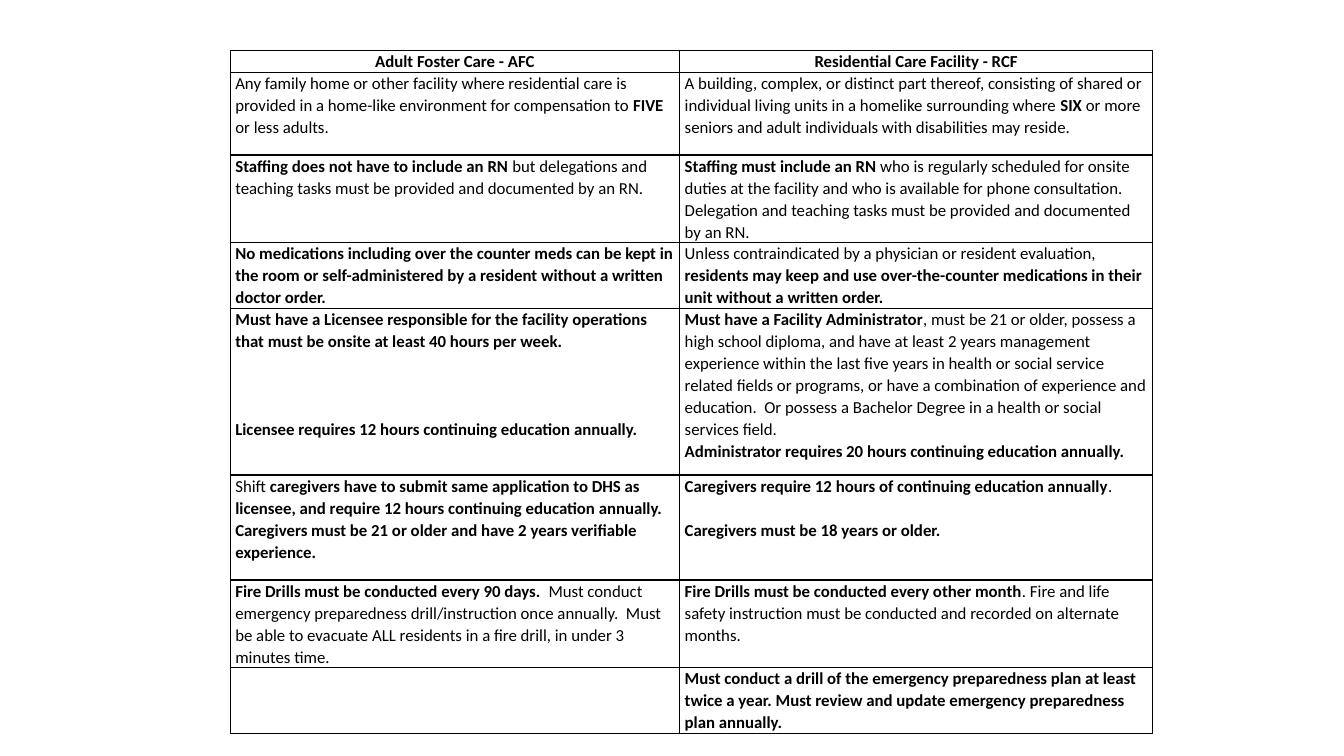
import dataclasses

import pptx
import pptx.dml.color
import pptx.enum.text
import pptx.oxml
import pptx.oxml.ns
import pptx.util

Pt = pptx.util.Pt
ALIGN = pptx.enum.text.PP_ALIGN


@dataclasses.dataclass(frozen=True)
class Theme:
    font: str = "Calibri"
    size: float = 12
    ink: str = "000000"
    border: float = 1
    line_spacing: float = 1.07
    line_height: float = 15.65
    side_margin: float = 3.6


THEME = Theme()
COLUMN_WIDTHS = (321, 338)
ROW_HEIGHTS = (15, 59, 59, 45, 119, 75, 59, 44)

# Asterisk pairs enclose bold words; each paragraph is (blank lines above, words).
ROWS = (
    ([(0, "**Adult Foster Care - AFC**")],
     [(0, "**Residential Care Facility - RCF**")]),
    ([(0, "Any family home or other facility where residential care is provided in a "
          "home-like environment for compensation to **FIVE** or less adults.")],
     [(0, "A building, complex, or distinct part thereof, consisting of shared or "
          "individual living units in a homelike surrounding where **SIX** or more "
          "seniors and adult individuals with disabilities may reside.")]),
    ([(0, "**Staffing does not have to include an RN** but delegations and teaching "
          "tasks must be provided and documented by an RN.")],
     [(0, "**Staffing must include an RN** who is regularly scheduled for onsite duties "
          "at the facility and who is available for phone consultation.  Delegation and "
          "teaching tasks must be provided and documented by an RN.")]),
    ([(0, "**No medications including over the counter meds can be kept in the room or "
          "self-administered by a resident without a written doctor order.**")],
     [(0, "Unless contraindicated by a physician or resident evaluation, **residents may "
          "keep and use over-the-counter medications in their unit without a written "
          "order.**")]),
    ([(0, "**Must have a Licensee responsible for the facility operations that must be "
          "onsite at least 40 hours per week.**"),
      (3, "**Licensee requires 12 hours continuing education annually.**")],
     [(0, "**Must have a Facility Administrator**, must be 21 or older, possess a high "
          "school diploma, and have at least 2 years management experience within the "
          "last five years in health or social service related fields or programs, or "
          "have a combination of experience and education.  Or possess a Bachelor Degree "
          "in a health or social services field."),
      (0, "**Administrator requires 20 hours continuing education annually.**")]),
    ([(0, "Shift **caregivers have to submit same application to DHS as licensee, and "
          "require 12 hours continuing education annually.**"),
      (0, "**Caregivers must be 21 or older and have 2 years verifiable experience.**")],
     [(0, "**Caregivers require 12 hours of continuing education annually**."),
      (1, "**Caregivers must be 18 years or older.**")]),
    ([(0, "**Fire Drills must be conducted every 90 days.**  Must conduct emergency "
          "preparedness drill/instruction once annually.  Must be able to evacuate ALL "
          "residents in a fire drill, in under 3 minutes time.")],
     [(0, "**Fire Drills must be conducted every other month**. Fire and life safety "
          "instruction must be conducted and recorded on alternate months.")]),
    ([],
     [(0, "**Must conduct a drill of the emergency preparedness plan at least twice a "
          "year. Must review and update emergency preparedness plan annually.**")]),
)


def add_spans(para, marked_text):
    for index, words in enumerate(marked_text.split("**")):
        if words:
            span = para.add_run()
            span.text = words
            span.font.name = THEME.font
            span.font.size = Pt(THEME.size)
            span.font.bold = index % 2 == 1
            span.font.color.rgb = pptx.dml.color.RGBColor.from_string(THEME.ink)


def write_cell(cell, paragraphs, align):
    cell.margin_left = cell.margin_right = Pt(THEME.side_margin)
    cell.margin_top = cell.margin_bottom = 0
    for index, (blank_lines, marked_text) in enumerate(paragraphs):
        frame = cell.text_frame
        para = frame.add_paragraph() if index else frame.paragraphs[0]
        para.alignment = align
        para.line_spacing = THEME.line_spacing
        if blank_lines:
            para.space_before = Pt(blank_lines * THEME.line_height)
        add_spans(para, marked_text)


def outline_cell(cell):
    cell.fill.background()
    properties = cell._tc.get_or_add_tcPr()
    for position, side in enumerate(("lnL", "lnR", "lnT", "lnB")):
        properties.insert(position, pptx.oxml.parse_xml(
            f'<a:{side} {pptx.oxml.ns.nsdecls("a")} w="{Pt(THEME.border)}">'
            f'<a:solidFill><a:srgbClr val="{THEME.ink}"/></a:solidFill></a:{side}>'))


def add_comparison(page, left, top):
    table = page.shapes.add_table(
        len(ROWS), len(COLUMN_WIDTHS), Pt(left), Pt(top),
        Pt(sum(COLUMN_WIDTHS)), Pt(sum(ROW_HEIGHTS))).table
    table.first_row = table.horz_banding = False
    for column, width in zip(table.columns, COLUMN_WIDTHS):
        column.width = Pt(width)
    for row_index, (row, height, contents) in enumerate(
            zip(table.rows, ROW_HEIGHTS, ROWS)):
        row.height = Pt(height)
        align = ALIGN.LEFT if row_index else ALIGN.CENTER
        for cell, paragraphs in zip(row.cells, contents):
            write_cell(cell, paragraphs, align)
            outline_cell(cell)


def main():
    deck = pptx.Presentation()
    deck.slide_width, deck.slide_height = Pt(960), Pt(540)
    page = deck.slides.add_slide(deck.slide_layouts[6])
    add_comparison(page, 164.5, 36)
    deck.save("out.pptx")


if __name__ == "__main__":
    main()
